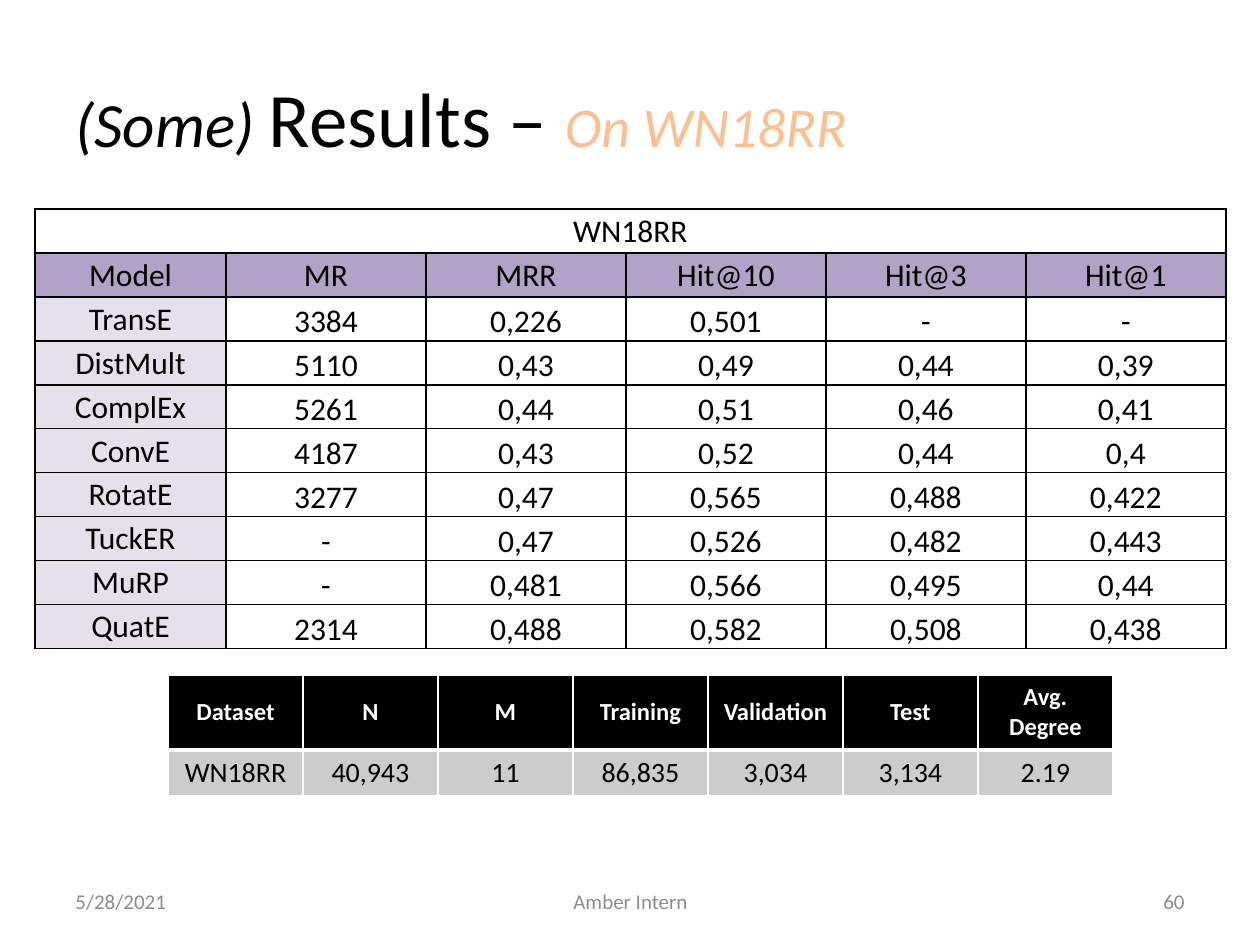
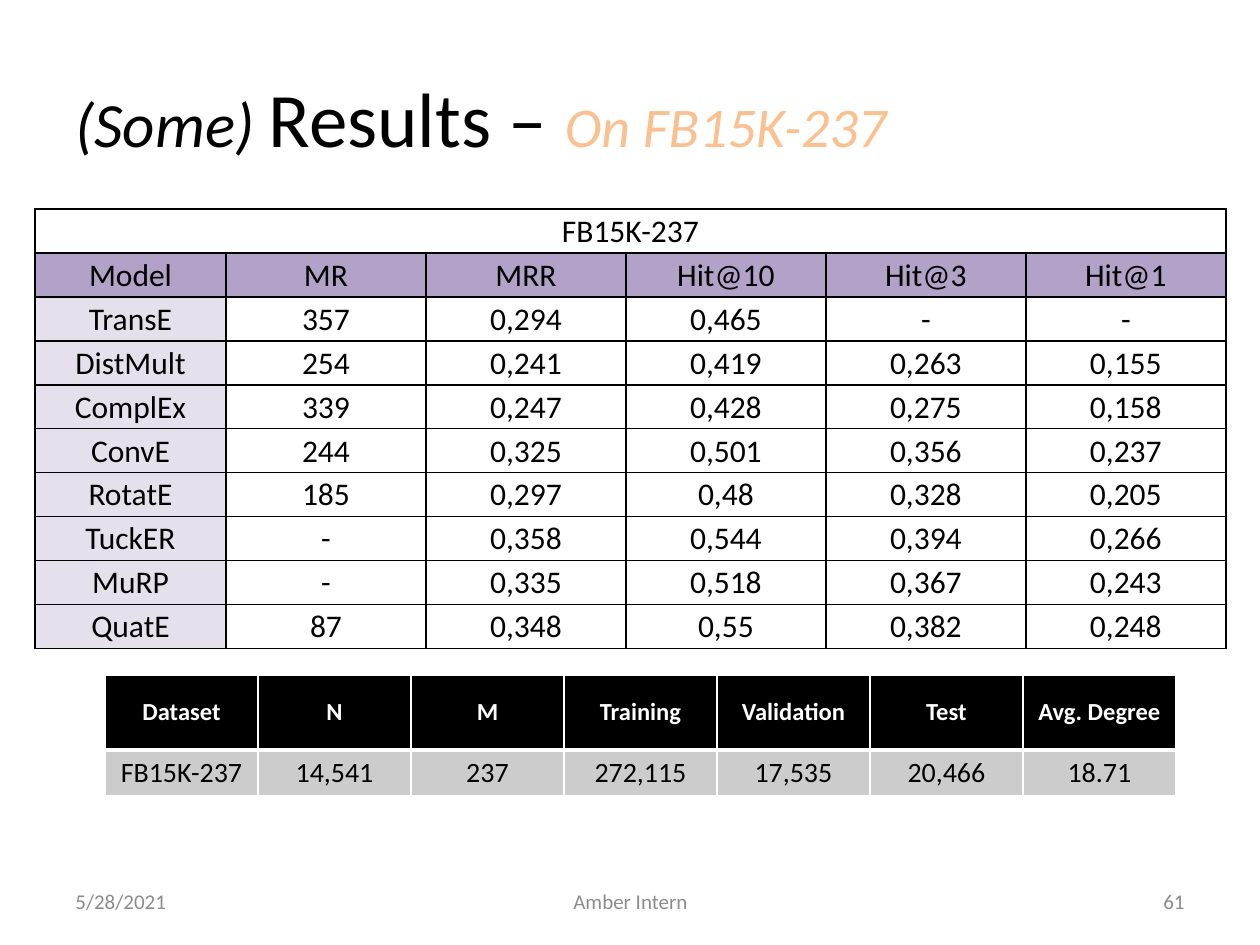
from lxml.etree import SubElement
from pptx import Presentation
from pptx.dml.color import RGBColor
from pptx.enum.text import MSO_ANCHOR, PP_ALIGN
from pptx.oxml.ns import qn
from pptx.util import Emu, Pt

SCALE = 914400 / 126
FONT = "Calibri"
HUES = {
    "black": "000000", "white": "FFFFFF", "gray": "8C8C8C", "peach": "FAC090",
    "head": "B3A2C7", "model": "E6E0EC", "stat": "CCCCCC",
}
MID, LOW = MSO_ANCHOR.MIDDLE, MSO_ANCHOR.BOTTOM

HEADS = ["Model", "MR", "MRR", "Hit@10", "Hit@3", "Hit@1"]
STATS = ["Dataset", "N", "M", "Training", "Validation", "Test", "Avg. Degree"]
PAGES = [
    {"name": "WN18RR", "page": "60", "anchor": LOW, "left": 168, "col": 135,
     "stats": ["40,943", "11", "86,835", "3,034", "3,134", "2.19"],
     "scores": [
         ["TransE", "3384", "0,226", "0,501", "-", "-"],
         ["DistMult", "5110", "0,43", "0,49", "0,44", "0,39"],
         ["ComplEx", "5261", "0,44", "0,51", "0,46", "0,41"],
         ["ConvE", "4187", "0,43", "0,52", "0,44", "0,4"],
         ["RotatE", "3277", "0,47", "0,565", "0,488", "0,422"],
         ["TuckER", "-", "0,47", "0,526", "0,482", "0,443"],
         ["MuRP", "-", "0,481", "0,566", "0,495", "0,44"],
         ["QuatE", "2314", "0,488", "0,582", "0,508", "0,438"]]},
    {"name": "FB15K-237", "page": "61", "anchor": MID, "left": 105, "col": 153,
     "stats": ["14,541", "237", "272,115", "17,535", "20,466", "18.71"],
     "scores": [
         ["TransE", "357", "0,294", "0,465", "-", "-"],
         ["DistMult", "254", "0,241", "0,419", "0,263", "0,155"],
         ["ComplEx", "339", "0,247", "0,428", "0,275", "0,158"],
         ["ConvE", "244", "0,325", "0,501", "0,356", "0,237"],
         ["RotatE", "185", "0,297", "0,48", "0,328", "0,205"],
         ["TuckER", "-", "0,358", "0,544", "0,394", "0,266"],
         ["MuRP", "-", "0,335", "0,518", "0,367", "0,243"],
         ["QuatE", "87", "0,348", "0,55", "0,382", "0,248"]]},
]


def px(count):
    return Emu(round(count * SCALE))


def dress(cell, text, size, hue, fill, line, edges, anchor=MID, bold=False):
    """Write and format a cell; edges are left, right, top, bottom widths in points."""
    cell.text_frame.text = text
    cell.vertical_anchor = anchor
    para = cell.text_frame.paragraphs[0]
    para.alignment = PP_ALIGN.CENTER
    font = para.font
    font.name, font.size, font.bold = FONT, Pt(size), bold
    font.color.rgb = RGBColor.from_string(HUES[hue])
    for run in para.runs:
        run.font.name, run.font.size, run.font.bold = FONT, Pt(size), bold
        run.font.color.rgb = RGBColor.from_string(HUES[hue])
    props = cell._tc.get_or_add_tcPr()
    for side, width in zip("LRTB", edges):
        edge = SubElement(props, qn(f"a:ln{side}"), w=str(Pt(width)))
        solid = SubElement(edge, qn("a:solidFill"))
        SubElement(solid, qn("a:srgbClr"), val=HUES[line])
    if fill:
        cell.fill.solid()
        cell.fill.fore_color.rgb = RGBColor.from_string(HUES[fill])
    else:
        cell.fill.background()


deck = Presentation()
deck.slide_width, deck.slide_height = px(1260), px(945)

for page in PAGES:
    slide = deck.slides.add_slide(deck.slide_layouts[6])

    # Title and footer: left, top, width, height, alignment, runs
    texts = [
        (63, 38, 1134, 158, PP_ALIGN.LEFT, [
            ("(Some) ", 36, "black", True),
            ("Results – ", 44, "black", False),
            (f"On {page['name']}", 32, "peach", True)]),
        (63, 876, 294, 50, PP_ALIGN.LEFT, [("5/28/2021", 12, "gray", False)]),
        (431, 876, 399, 50, PP_ALIGN.CENTER, [("Amber Intern", 12, "gray", False)]),
        (903, 876, 294, 50, PP_ALIGN.RIGHT, [(page["page"], 12, "gray", False)]),
    ]
    for left, top, width, height, align, parts in texts:
        box = slide.shapes.add_textbox(px(left), px(top), px(width), px(height))
        frame = box.text_frame
        frame.word_wrap = True
        frame.vertical_anchor = MID
        para = frame.paragraphs[0]
        para.alignment = align
        for text, size, hue, slant in parts:
            run = para.add_run()
            run.text = text
            run.font.name, run.font.size, run.font.italic = FONT, Pt(size), slant
            run.font.color.rgb = RGBColor.from_string(HUES[hue])

    # Scores by model
    rows = [[page["name"]] + [""] * 5, HEADS] + page["scores"]
    grid = slide.shapes.add_table(
        len(rows), len(HEADS), px(35), px(209), px(1191), px(440)).table
    grid.first_row = grid.horz_banding = False
    for c, col in enumerate(grid.columns):
        col.width = px(200 if c else 191)
    for r, row in enumerate(rows):
        grid.rows[r].height = px(44)
        for c, text in enumerate(row):
            cell = grid.cell(r, c)
            cell.margin_left = cell.margin_right = cell.margin_top = px(1)
            cell.margin_bottom = 0
            fill = "head" if r == 1 else "model" if r > 1 and c == 0 else None
            anchor = page["anchor"] if r > 1 and c else MID
            dress(cell, text, 18, "black", fill, "black", (1, 1, 1, 1), anchor)
    grid.cell(0, 0).merge(grid.cell(0, 5))

    # Size of the dataset
    stats = slide.shapes.add_table(
        2, len(STATS), px(page["left"]), px(675),
        px(page["col"] * len(STATS)), px(121)).table
    stats.first_row = stats.horz_banding = False
    stats.rows[0].height, stats.rows[1].height = px(75), px(46)
    for c, (head, value) in enumerate(zip(STATS, [page["name"]] + page["stats"])):
        stats.columns[c].width = px(page["col"])
        dress(stats.cell(0, c), head, 14, "white", "black", "white",
              (1, 1, 1, 3), bold=True)
        dress(stats.cell(1, c), value, 16, "black", "stat", "white", (1, 1, 3, 1))

deck.save("out.pptx")
